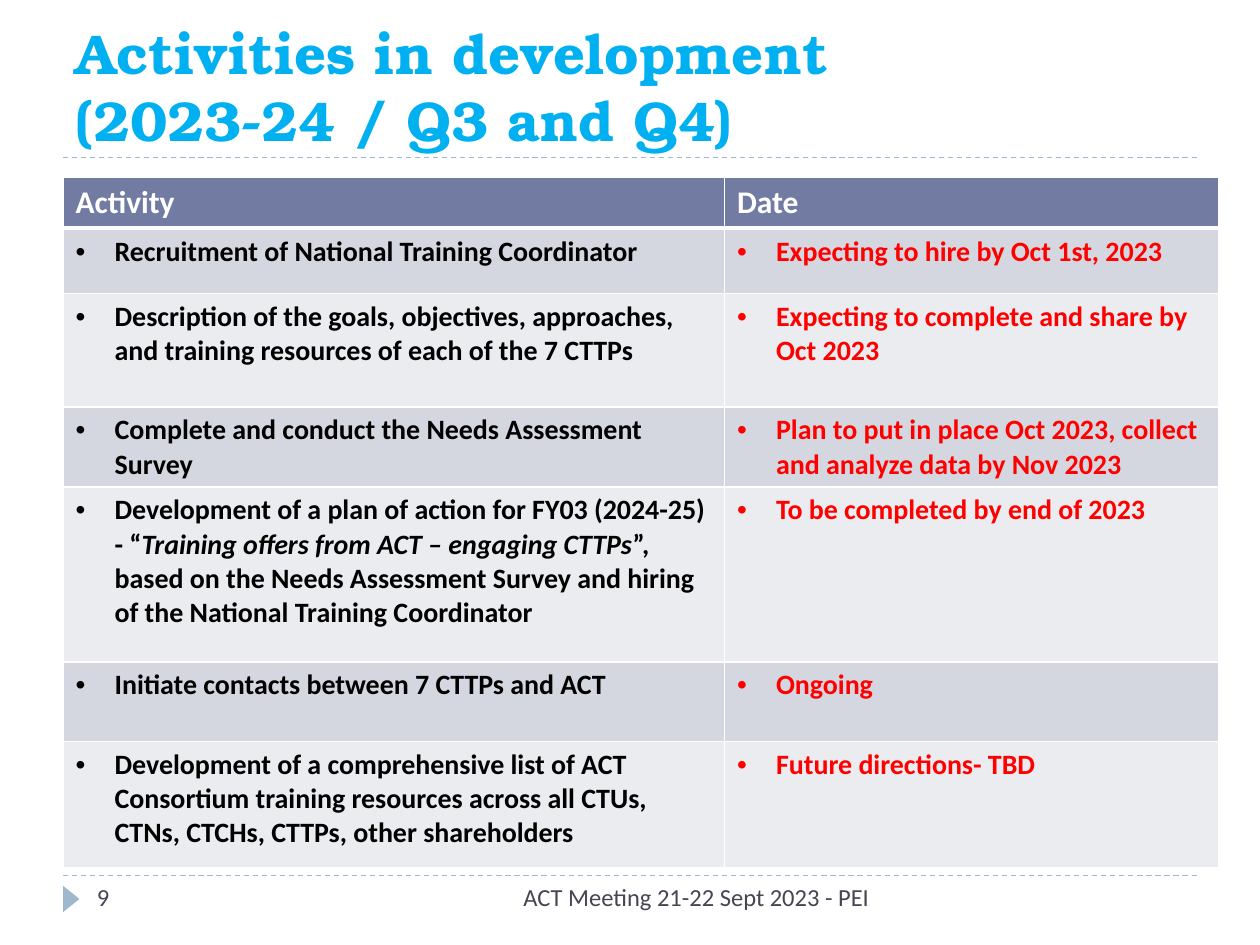
"""Build the slide listing training activities in development and their dates."""
import pptx
import pptx.util
import pptx.dml.color
import pptx.enum.dml
import pptx.enum.shapes
import pptx.enum.text
import pptx.oxml
import pptx.oxml.ns

Inches, Pt = pptx.util.Inches, pptx.util.Pt
RGBColor = pptx.dml.color.RGBColor
ALIGN, ANCHOR = pptx.enum.text.PP_ALIGN, pptx.enum.text.MSO_ANCHOR

WHITE = RGBColor(0xFF, 0xFF, 0xFF)
BLACK = RGBColor(0x00, 0x00, 0x00)
RED = RGBColor(0xFF, 0x00, 0x00)
SKY = RGBColor(0x00, 0xB0, 0xF0)
SLATE = RGBColor(0x46, 0x46, 0x53)
PALE_BLUE = RGBColor(0x9F, 0xB8, 0xCD)
HEADER_FILL = RGBColor(0x72, 0x7C, 0xA3)
BAND_FILLS = [RGBColor(0xD5, 0xD7, 0xE0), RGBColor(0xEB, 0xEC, 0xF0)]

TITLE = ["Activities in development", "(2023-24 / Q3 and Q4)"]
FOOTER = "ACT Meeting 21-22 Sept 2023 - PEI"
PAGE_NUMBER = "9"
HEADINGS = ("Activity", "Date")
PLAN_OF_ACTION = [
    ("Development of a plan of action for FY03 (2024-25) - “", False),
    ("Training offers from ACT – engaging CTTPs", True),
    ("”, based on the Needs Assessment Survey and hiring of the "
     "National Training Coordinator", False),
]
ACTIVITIES = [
    ("Recruitment of National Training Coordinator",
     "Expecting to hire by Oct 1st, 2023"),
    ("Description of the goals, objectives, approaches, and training "
     "resources of each of the 7 CTTPs",
     "Expecting to complete and share by Oct 2023"),
    ("Complete and conduct the Needs Assessment Survey",
     "Plan to put in place Oct 2023, collect and analyze data by Nov 2023"),
    (PLAN_OF_ACTION, "To be completed by end of 2023"),
    ("Initiate contacts between 7 CTTPs and ACT", "Ongoing"),
    ("Development of a comprehensive list of ACT Consortium training "
     "resources across all CTUs, CTNs, CTCHs, CTTPs, other shareholders",
     "Future directions- TBD"),
]
COLUMN_WIDTHS = [5.25, 3.92]
ROW_HEIGHTS = [0.39, 0.52, 0.9, 0.63, 1.39, 0.63, 1]
RULE_HEIGHTS = [6.95, 1.25]


def write(paragraph, text, *, size, color, font="Calibri", bold=False,
          align=ALIGN.LEFT, bullet=False):
    paragraph.alignment = align
    pieces = [(text, False)] if isinstance(text, str) else text
    for words, italic in pieces:
        run = paragraph.add_run()
        run.text = words
        run.font.size = Pt(size)
        run.font.name = font
        run.font.bold = bold
        run.font.italic = italic
        run.font.color.rgb = color
    if bullet:
        properties = paragraph._p.get_or_add_pPr()
        properties.set("marL", str(Inches(0.31)))
        properties.set("indent", str(-Inches(0.31)))
        properties.append(pptx.oxml.parse_xml(
            f'<a:buFont {pptx.oxml.ns.nsdecls("a")} typeface="Arial"/>'))
        properties.append(pptx.oxml.parse_xml(
            f'<a:buChar {pptx.oxml.ns.nsdecls("a")} char="•"/>'))


def add_text(slide, box, lines, anchor=ANCHOR.TOP, **style):
    frame = slide.shapes.add_textbox(*map(Inches, box)).text_frame
    frame.word_wrap = True
    frame.vertical_anchor = anchor
    for index, line in enumerate(lines):
        paragraph = frame.add_paragraph() if index else frame.paragraphs[0]
        write(paragraph, line, **style)


def add_rule(slide, y):
    rule = slide.shapes.add_connector(
        pptx.enum.shapes.MSO_CONNECTOR.STRAIGHT,
        Inches(0.5), Inches(y), Inches(9.5), Inches(y))
    rule.line.color.rgb = PALE_BLUE
    rule.line.width = Pt(0.75)
    rule.line.dash_style = pptx.enum.dml.MSO_LINE.DASH
    rule._element.spPr.append(pptx.oxml.parse_xml(
        f'<a:effectLst {pptx.oxml.ns.nsdecls("a")}/>'))


def set_borders(cell, widths):
    properties = cell._tc.get_or_add_tcPr()
    for index, (side, width) in enumerate(widths.items()):
        properties.insert(index, pptx.oxml.parse_xml(
            f'<a:ln{side} {pptx.oxml.ns.nsdecls("a")} w="{Pt(width)}">'
            f'<a:solidFill><a:srgbClr val="{WHITE}"/></a:solidFill>'
            f'</a:ln{side}>'))


def add_activity_table(slide):
    table = slide.shapes.add_table(
        len(ROW_HEIGHTS), len(COLUMN_WIDTHS), Inches(0.5), Inches(1.41),
        Inches(sum(COLUMN_WIDTHS)), Inches(sum(ROW_HEIGHTS))).table
    for column, width in zip(table.columns, COLUMN_WIDTHS):
        column.width = Inches(width)
    for row, height in zip(table.rows, ROW_HEIGHTS):
        row.height = Inches(height)
    for r, entries in enumerate([HEADINGS] + ACTIVITIES):
        for c, entry in enumerate(entries):
            cell = table.cell(r, c)
            cell.fill.solid()
            cell.fill.fore_color.rgb = BAND_FILLS[(r - 1) % 2] if r else HEADER_FILL
            set_borders(cell, {"L": 1, "R": 1, "T": 3 if r == 1 else 1,
                               "B": 1 if r else 3})
            write(cell.text_frame.paragraphs[0], entry, bold=True,
                  size=16 if r else 18, bullet=r > 0,
                  color=(BLACK, RED)[c] if r else WHITE)


def main():
    deck = pptx.Presentation()
    deck.slide_width, deck.slide_height = Inches(10), Inches(7.5)
    slide = deck.slides.add_slide(deck.slide_layouts[6])

    for y in RULE_HEIGHTS:
        add_rule(slide, y)
    marker = slide.shapes.add_shape(
        pptx.enum.shapes.MSO_SHAPE.ISOSCELES_TRIANGLE,
        Inches(0.46), Inches(7.07), Inches(0.21), Inches(0.13))
    marker.rotation = 90
    marker.shadow.inherit = False
    marker.fill.solid()
    marker.fill.fore_color.rgb = PALE_BLUE
    marker.line.fill.background()

    add_text(slide, (3.17, 6.95, 3.83, 0.4), [FOOTER], size=14, color=SLATE,
             align=ALIGN.RIGHT)
    add_text(slide, (0.67, 6.95, 2.17, 0.4), [PAGE_NUMBER], size=14, color=SLATE)
    add_text(slide, (0.5, 0.08, 8.83, 1.18), TITLE, anchor=ANCHOR.BOTTOM,
             size=32, color=SKY, font="TeX Gyre Bonum", bold=True)
    add_activity_table(slide)
    deck.save("out.pptx")


if __name__ == "__main__":
    main()
